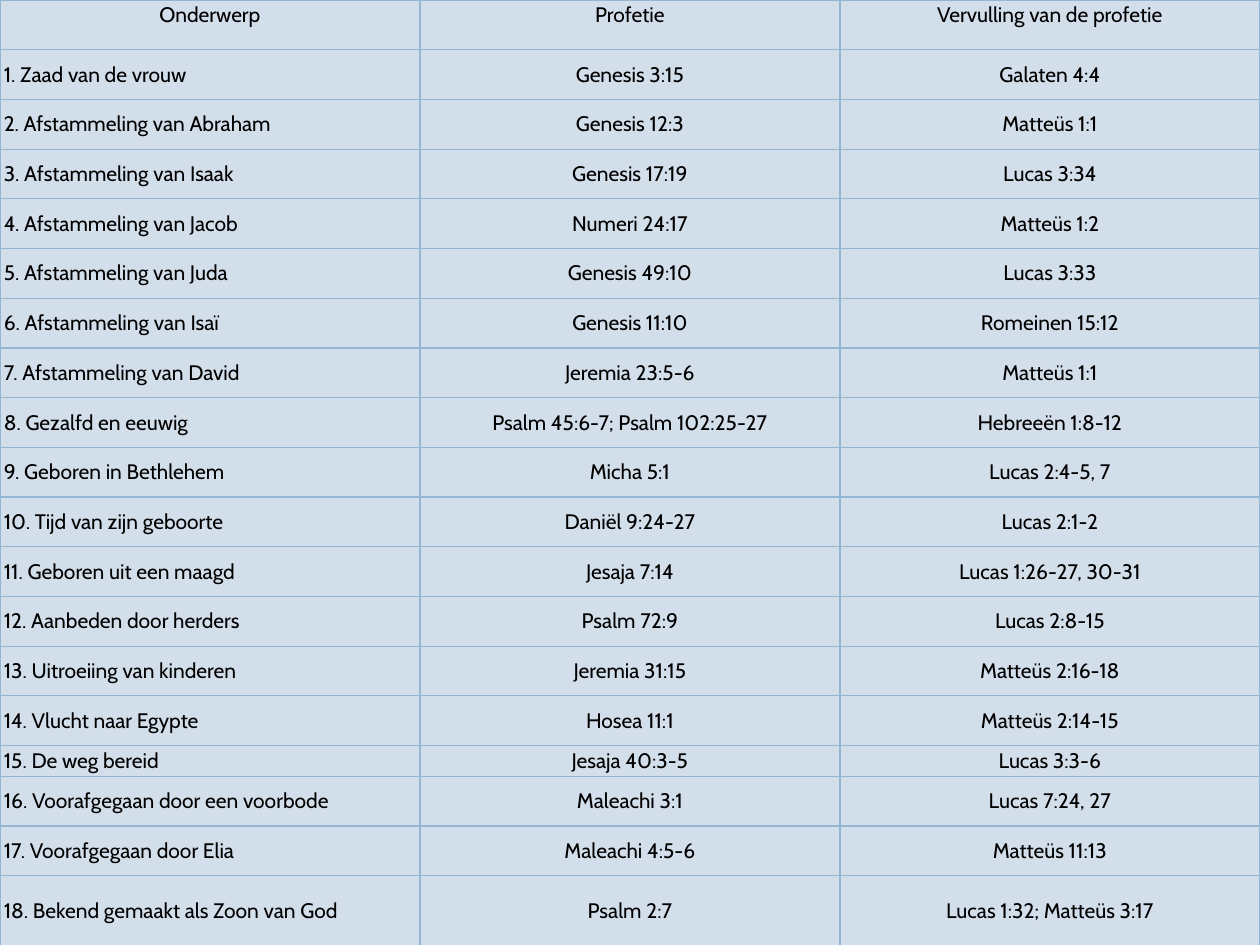
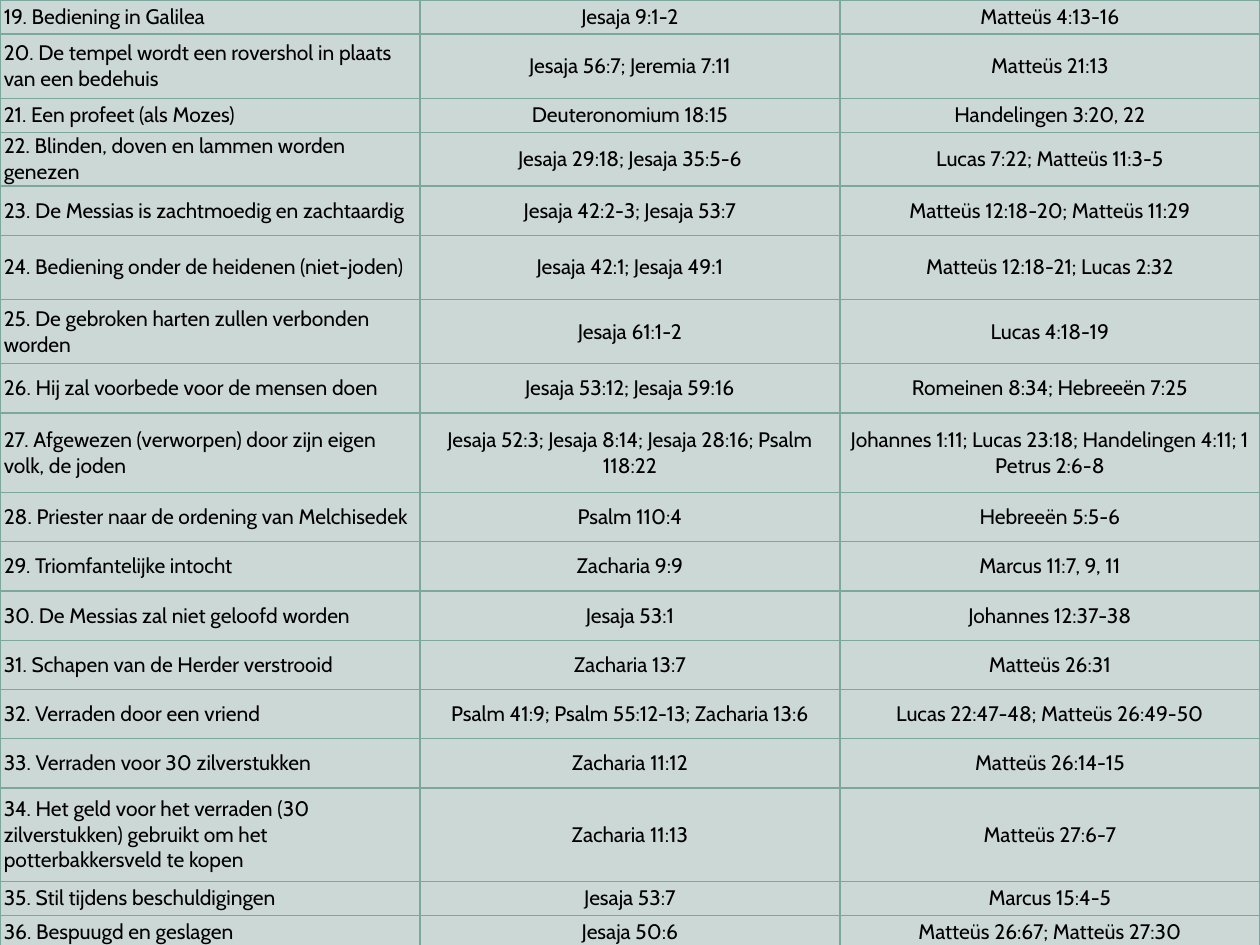
from lxml import etree
from pptx import Presentation
from pptx.dml.color import RGBColor
from pptx.enum import text as t
from pptx.oxml import ns
from pptx.util import Inches, Pt

BLACK = RGBColor(0, 0, 0)
BLUE, PALE_BLUE = RGBColor(0x94, 0xB6, 0xD2), RGBColor(0xD2, 0xDE, 0xEA)
GREEN, PALE_GREEN = RGBColor(0x7B, 0xA7, 0x9D), RGBColor(0xCC, 0xD8, 0xD5)
FONT, SIZE, LINE = "Cabin", Pt(12), Pt(0.79)
COLS = 3

HEAD = ("Onderwerp", "Profetie", "Vervulling van de profetie")
BIRTH = [
    ("Zaad van de vrouw", "Genesis 3:15", "Galaten 4:4"),
    ("Afstammeling van Abraham", "Genesis 12:3", "Matteüs 1:1"),
    ("Afstammeling van Isaak", "Genesis 17:19", "Lucas 3:34"),
    ("Afstammeling van Jacob", "Numeri 24:17", "Matteüs 1:2"),
    ("Afstammeling van Juda", "Genesis 49:10", "Lucas 3:33"),
    ("Afstammeling van Isaï", "Genesis 11:10", "Romeinen 15:12"),
    ("Afstammeling van David", "Jeremia 23:5-6", "Matteüs 1:1"),
    ("Gezalfd en eeuwig", "Psalm 45:6-7; Psalm 102:25-27", "Hebreeën 1:8-12"),
    ("Geboren in Bethlehem", "Micha 5:1", "Lucas 2:4-5, 7"),
    ("Tijd van zijn geboorte", "Daniël 9:24-27", "Lucas 2:1-2"),
    ("Geboren uit een maagd", "Jesaja 7:14", "Lucas 1:26-27, 30-31"),
    ("Aanbeden door herders", "Psalm 72:9", "Lucas 2:8-15"),
    ("Uitroeiing van kinderen", "Jeremia 31:15", "Matteüs 2:16-18"),
    ("Vlucht naar Egypte", "Hosea 11:1", "Matteüs 2:14-15"),
    ("De weg bereid", "Jesaja 40:3-5", "Lucas 3:3-6"),
    ("Voorafgegaan door een voorbode", "Maleachi 3:1", "Lucas 7:24, 27"),
    ("Voorafgegaan door Elia", "Maleachi 4:5-6", "Matteüs 11:13"),
    ("Bekend gemaakt als Zoon van God", "Psalm 2:7", "Lucas 1:32; Matteüs 3:17"),
]
WORK = [
    ("Bediening in Galilea", "Jesaja 9:1-2", "Matteüs 4:13-16"),
    ("De tempel wordt een rovershol in plaats van een bedehuis",
     "Jesaja 56:7; Jeremia 7:11", "Matteüs 21:13"),
    ("Een profeet (als Mozes)", "Deuteronomium 18:15", "Handelingen 3:20, 22"),
    ("Blinden, doven en lammen worden genezen",
     "Jesaja 29:18; Jesaja 35:5-6", "Lucas 7:22; Matteüs 11:3-5"),
    ("De Messias is zachtmoedig en zachtaardig",
     "Jesaja 42:2-3; Jesaja 53:7", "Matteüs 12:18-20; Matteüs 11:29"),
    ("Bediening onder de heidenen (niet-joden)",
     "Jesaja 42:1; Jesaja 49:1", "Matteüs 12:18-21; Lucas 2:32"),
    ("De gebroken harten zullen verbonden worden", "Jesaja 61:1-2", "Lucas 4:18-19"),
    ("Hij zal voorbede voor de mensen doen",
     "Jesaja 53:12; Jesaja 59:16", "Romeinen 8:34; Hebreeën 7:25"),
    ("Afgewezen (verworpen) door zijn eigen volk, de joden",
     "Jesaja 52:3; Jesaja 8:14; Jesaja 28:16; Psalm 118:22",
     "Johannes 1:11; Lucas 23:18; Handelingen 4:11; 1 Petrus 2:6-8"),
    ("Priester naar de ordening van Melchisedek", "Psalm 110:4", "Hebreeën 5:5-6"),
    ("Triomfantelijke intocht", "Zacharia 9:9", "Marcus 11:7, 9, 11"),
    ("De Messias zal niet geloofd worden", "Jesaja 53:1", "Johannes 12:37-38"),
    ("Schapen van de Herder verstrooid", "Zacharia 13:7", "Matteüs 26:31"),
    ("Verraden door een vriend",
     "Psalm 41:9; Psalm 55:12-13; Zacharia 13:6", "Lucas 22:47-48; Matteüs 26:49-50"),
    ("Verraden voor 30 zilverstukken", "Zacharia 11:12", "Matteüs 26:14-15"),
    ("Het geld voor het verraden (30 zilverstukken) gebruikt om het "
     "potterbakkersveld te kopen", "Zacharia 11:13", "Matteüs 27:6-7"),
    ("Stil tijdens beschuldigingen", "Jesaja 53:7", "Marcus 15:4-5"),
    ("Bespuugd en geslagen", "Jesaja 50:6", "Matteüs 26:67; Matteüs 27:30"),
]


def number(rows, first):
    """Put a running number before each topic."""
    return [(f"{n}. {topic}", *refs) for n, (topic, *refs) in enumerate(rows, first)]


def border(cell, color):
    props = cell._tc.get_or_add_tcPr()
    for side in ("lnL", "lnR", "lnT", "lnB"):
        line = etree.SubElement(props, ns.qn(f"a:{side}"), w=str(LINE))
        fill = etree.SubElement(line, ns.qn("a:solidFill"))
        etree.SubElement(fill, ns.qn("a:srgbClr"), val=str(color))


# Rows, table height, row heights that differ from the even share, line, fill, top inset
PAGES = [
    ([HEAD] + number(BIRTH, 1), 7.51, {15: 0.24, 18: 0.56}, BLUE, PALE_BLUE, 0.02),
    (number(WORK, 19), 7.5,
     {0: 0.27, 1: 0.51, 2: 0.27, 5: 0.51, 6: 0.51, 8: 0.63, 15: 0.74, 16: 0.27, 17: 0.27},
     GREEN, PALE_GREEN, 0.01),
]

deck = Presentation()
deck.slide_width, deck.slide_height = Inches(10), Inches(7.5)

for rows, high, odd, line, fill, inset in PAGES:
    slide = deck.slides.add_slide(deck.slide_layouts[6])
    table = slide.shapes.add_table(
        len(rows), COLS, 0, 0, deck.slide_width, Inches(high)).table
    table.first_row = table.horz_banding = False
    even = (high - sum(odd.values())) / (len(rows) - len(odd))
    for r, row in enumerate(rows):
        table.rows[r].height = Inches(odd.get(r, even))
        for c, words in enumerate(row):
            cell = table.cell(r, c)
            border(cell, line)
            cell.fill.solid()
            cell.fill.fore_color.rgb = fill
            cell.margin_left = cell.margin_right = Inches(0.03)
            cell.margin_top = cell.margin_bottom = Inches(inset)
            top = row is HEAD
            cell.vertical_anchor = t.MSO_ANCHOR.TOP if top else t.MSO_ANCHOR.MIDDLE
            para = cell.text_frame.paragraphs[0]
            para.alignment = t.PP_ALIGN.CENTER if top or c else t.PP_ALIGN.LEFT
            run = para.add_run()
            run.text = words
            run.font.name, run.font.size = FONT, SIZE
            run.font.color.rgb = BLACK

deck.save("out.pptx")
